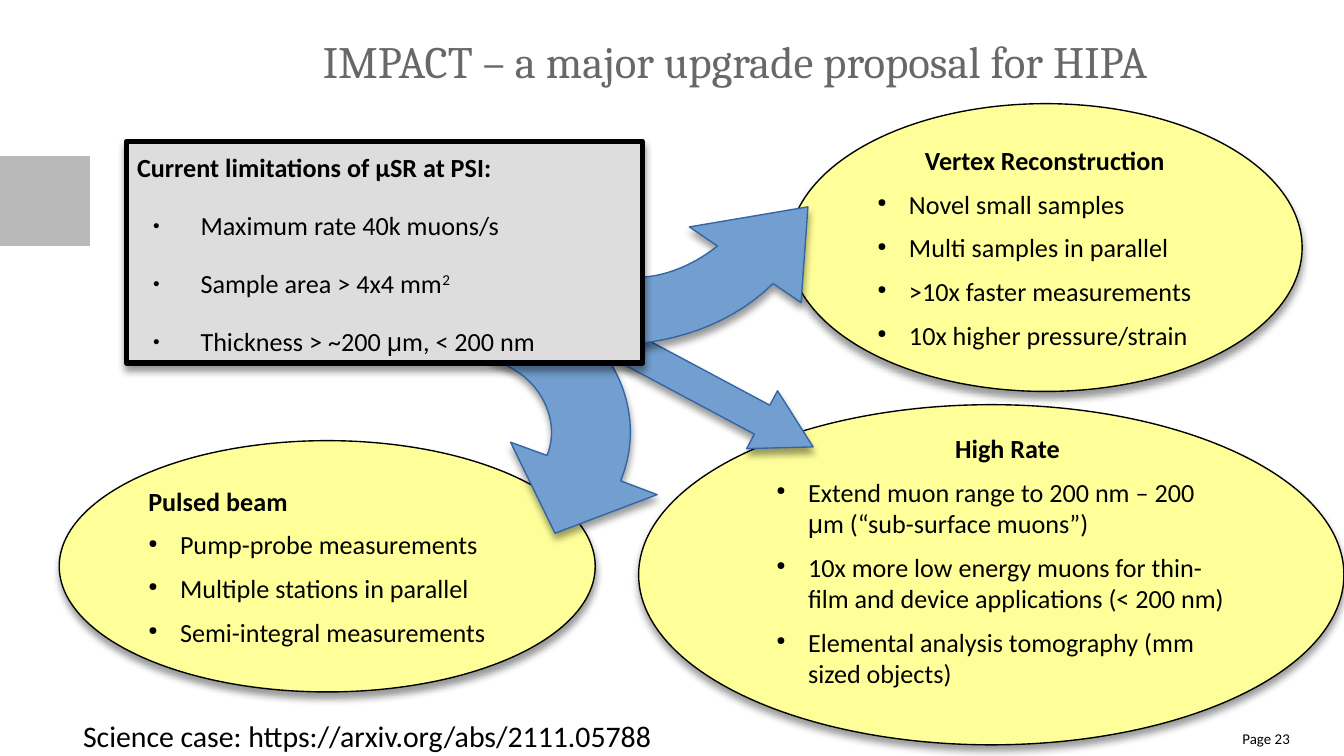
"""Build the slide on the IMPACT upgrade proposal for HIPA."""
from dataclasses import dataclass

import pptx
import pptx.dml.color
import pptx.enum.shapes
import pptx.enum.text
import pptx.oxml
import pptx.oxml.ns
import pptx.util
from pptx.util import Cm

ALIGN = pptx.enum.text.PP_ALIGN
ANCHOR = pptx.enum.text.MSO_ANCHOR
PRESET = pptx.enum.shapes.MSO_SHAPE


@dataclass(frozen=True)
class Theme:
    black: str = "000000"
    title: str = "686868"
    marker: str = "B9B9B9"
    panel: str = "DDDDDD"
    bubble: str = "FFFF99"
    arrow: str = "729FCF"
    arrow_line: str = "3465A4"
    title_font: str = "Cambria"
    body_font: str = "Calibri"
    symbol_font: str = "Arial"
    title_size: float = 24
    source_size: float = 16
    body_size: float = 14
    page_size: float = 8


THEME = Theme()
HEADING = "Current limitations of µSR at PSI:"
LIMITATIONS = [
    ["Maximum rate 40k muons/s"],
    ["Sample area > 4x4 mm", "^2"],
    ["Thickness > ~200 ", "μ", "m, < 200 nm"],
]
HIGH_RATE = [
    ["Extend muon range to 200 nm – 200 ", "μ", "m (“sub-surface muons”)"],
    ["10x more low energy muons for thin-film and device applications (< 200 nm)"],
    ["Elemental analysis tomography (mm sized objects)"],
]
PULSED_BEAM = [
    ["Pump-probe measurements"],
    ["Multiple stations in parallel"],
    ["Semi-integral measurements"],
]
VERTEX = [
    ["Novel small samples"],
    ["Multi samples in parallel"],
    [">10x faster measurements"],
    ["10x higher pressure/strain"],
]


def color(value):
    """Turn a hex string into a colour."""
    return pptx.dml.color.RGBColor.from_string(value)


def add_xml(parent, xml):
    """Append a DrawingML element to a parent."""
    parent.append(pptx.oxml.parse_xml(xml.replace(" ", f" {pptx.oxml.ns.nsdecls('a')} ", 1)))


def place(shape, box):
    """Move and size a shape by a box in centimetres."""
    shape.left, shape.top, shape.width, shape.height = map(Cm, box)


def paint(shape, fill, line=None, width=0, shadow=True):
    """Set fill, outline and soft shadow of a shape."""
    shape.fill.solid()
    shape.fill.fore_color.rgb = color(fill)
    if line:
        shape.line.color.rgb = color(line)
        shape.line.width = pptx.util.Pt(width)
    else:
        shape.line.fill.background()
    shape.shadow.inherit = False
    if shadow:
        effects = shape._element.spPr.find(pptx.oxml.ns.qn("a:effectLst"))
        add_xml(effects, '<a:outerShdw blurRad="50800" dist="38100" dir="5400000" rotWithShape="0">'
                         '<a:srgbClr val="000000"><a:alpha val="40000"/></a:srgbClr></a:outerShdw>')


def set_frame(shape, insets=(0, 0, 0, 0), anchor=ANCHOR.TOP):
    """Prepare a wrapping text frame with insets in centimetres."""
    frame = shape.text_frame
    frame.word_wrap = True
    frame.auto_size = pptx.enum.text.MSO_AUTO_SIZE.NONE
    frame.vertical_anchor = anchor
    frame.margin_left, frame.margin_top, frame.margin_right, frame.margin_bottom = map(Cm, insets)
    return frame


def set_font(paragraph, size, name=THEME.body_font, value=THEME.black, bold=False):
    """Format the font of a paragraph."""
    font = paragraph.font
    font.size, font.name, font.bold = pptx.util.Pt(size), name, bold
    font.color.rgb = color(value)


def add_fragments(paragraph, fragments):
    """Add runs, with Greek letters in the symbol font and ^ as superscript."""
    for fragment in fragments:
        run = paragraph.add_run()
        run.text = fragment.lstrip("^")
        if fragment == "μ":
            run.font.name = THEME.symbol_font
        elif fragment.startswith("^"):
            run.font._element.set("baseline", "33000")


def fill_list(frame, heading, items, indent, hanging, gap, heading_indent=0, align=ALIGN.LEFT):
    """Write a bold heading and its bulleted items."""
    paragraph = frame.paragraphs[0]
    paragraph.text = heading
    properties = paragraph._p.get_or_add_pPr()
    properties.set("marL", str(Cm(heading_indent)))
    properties.set("indent", "0")
    add_xml(properties, "<a:buNone />")
    paragraph.alignment = align
    paragraph.space_before = pptx.util.Pt(0)
    set_font(paragraph, THEME.body_size, bold=True)
    for item in items:
        paragraph = frame.add_paragraph()
        add_fragments(paragraph, item)
        properties = paragraph._p.get_or_add_pPr()
        properties.set("marL", str(Cm(indent)))
        properties.set("indent", str(-Cm(hanging)))
        add_xml(properties, f'<a:buClr ><a:srgbClr val="{THEME.black}"/></a:buClr>')
        add_xml(properties, '<a:buSzPct val="45000"/>')
        add_xml(properties, '<a:buChar char="●"/>')
        paragraph.alignment = align
        paragraph.space_before = pptx.util.Pt(gap)
        set_font(paragraph, THEME.body_size)


def add_bubble(slide, box, heading, items, heading_indent=0, side=0.25, bottom=0.13, indent=0.6):
    """Add an ellipse that holds a heading and a list."""
    shape = slide.shapes.add_shape(PRESET.OVAL, *map(Cm, box))
    paint(shape, THEME.bubble, THEME.black)
    frame = set_frame(shape, (side, 0.13, side, bottom), ANCHOR.MIDDLE)
    fill_list(frame, heading, items, indent, 0.6, 6.6, heading_indent)


def curve(start, first, second, end, steps=24):
    """Return points along a cubic Bézier curve."""
    return [tuple((1 - t) ** 3 * a + 3 * (1 - t) ** 2 * t * b + 3 * (1 - t) * t ** 2 * c + t ** 3 * d
                  for a, b, c, d in zip(start, first, second, end))
            for t in (step / steps for step in range(steps + 1))]


def add_curved_arrow(slide, outer, head, inner):
    """Add a bent arrow from its two edge curves and its head."""
    points = [(Cm(x), Cm(y)) for x, y in curve(*outer) + head + curve(*inner)]
    builder = slide.shapes.build_freeform(*points[0])
    builder.add_line_segments(points[1:], close=True)
    paint(builder.convert_to_shape(), THEME.arrow, THEME.arrow_line)


def add_straight_arrow(slide, box, rotation):
    """Add a rotated block arrow."""
    shape = slide.shapes.add_shape(PRESET.RIGHT_ARROW, *map(Cm, box))
    shape.adjustments[0], shape.adjustments[1] = 0.5, 0.88
    shape.rotation = rotation
    paint(shape, THEME.arrow, THEME.arrow_line)


def add_label(slide, box, text, size, align=ALIGN.LEFT, spacing=1.0):
    """Add a one-line text box."""
    paragraph = set_frame(slide.shapes.add_textbox(*map(Cm, box))).paragraphs[0]
    paragraph.text, paragraph.alignment, paragraph.line_spacing = text, align, spacing
    set_font(paragraph, size)


def write_title(slide, box, text):
    """Fill the title placeholder."""
    title = slide.shapes.title
    place(title, box)
    paragraph = set_frame(title, anchor=ANCHOR.MIDDLE).paragraphs[0]
    paragraph.text, paragraph.alignment = text, ALIGN.LEFT
    set_font(paragraph, THEME.title_size, THEME.title_font, THEME.title)


def write_panel(slide, box):
    """Fill the body placeholder and bring it to the front."""
    body = slide.placeholders[1]
    place(body, box)
    slide.shapes._spTree.append(body._element)
    add_xml(body._element.spPr, '<a:prstGeom prst="rect"><a:avLst/></a:prstGeom>')
    paint(body, THEME.panel, THEME.black, 2.83)
    fill_list(set_frame(body, (0.2,) * 4), HEADING, LIMITATIONS, 1.2, 0.9, 14.2, align=ALIGN.JUSTIFY)


def main():
    """Build and save the presentation."""
    presentation = pptx.Presentation()
    presentation.slide_width, presentation.slide_height = Cm(25.4), Cm(14.29)
    slide = presentation.slides.add_slide(presentation.slide_layouts[1])
    marker = slide.shapes.add_shape(PRESET.RECTANGLE, Cm(0), Cm(2.95), Cm(1.7), Cm(1.7))
    paint(marker, THEME.marker, shadow=False)
    add_label(slide, (22.78, 13.79, 1.6, 0.41), "Page 23", THEME.page_size, ALIGN.RIGHT)
    write_title(slide, (6.1, 0.61, 18.64, 1.07), "IMPACT – a major upgrade proposal for HIPA")
    add_bubble(slide, (12.07, 7.65, 13.33, 6.43), "High Rate", HIGH_RATE, 3.78, bottom=0.66, indent=1)
    add_bubble(slide, (1.12, 8.33, 10.13, 4.75), "Pulsed beam", PULSED_BEAM, side=0.2)
    add_curved_arrow(slide, [(9.6, 5.51), (11.28, 5.87), (12.37, 7.54), (11.73, 9.09)],
                     [(12.42, 9.35), (10.49, 10.08), (9.65, 8.36)],
                     [(10.34, 8.61), (10.64, 7.87), (10.11, 6.99), (9.27, 6.81)])
    add_bubble(slide, (14.91, 1.96, 9.7, 5.44), "Vertex Reconstruction", VERTEX, 0.9)
    add_straight_arrow(slide, (11.18, 6.78, 4.45, 1.24), 28.1)
    add_curved_arrow(slide, [(9.83, 5.87), (10.74, 6.86), (13.26, 6.71), (14.61, 5.36)],
                     [(15.14, 5.72), (15.27, 3.91), (13.03, 4.29)],
                     [(13.56, 4.65), (12.8, 5.26), (11.73, 5.49), (11.18, 4.9)])
    write_panel(slide, (2.39, 2.67, 9.75, 4.19))
    add_label(slide, (1.57, 13.49, 11.4, 0.91), "Science case: https://arxiv.org/abs/2111.05788",
              THEME.source_size, spacing=1.1)
    presentation.save("out.pptx")


if __name__ == "__main__":
    main()
